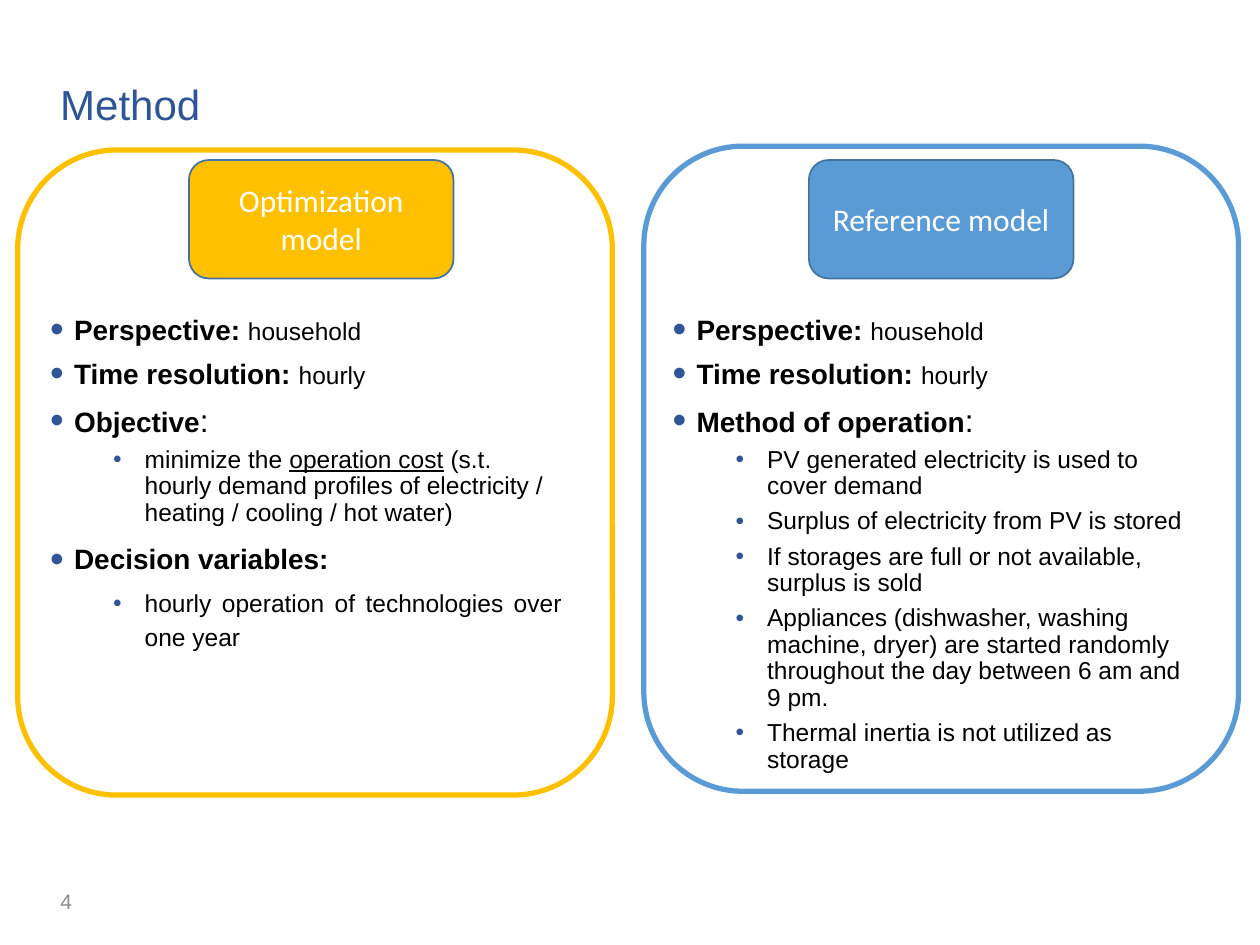
"""Build a slide that compares the optimization model with the reference model."""
from dataclasses import dataclass

import pptx
import pptx.dml.color
import pptx.enum.shapes
import pptx.enum.text
import pptx.oxml
import pptx.oxml.ns
import pptx.util

ALIGN = pptx.enum.text.PP_ALIGN
ANCHOR = pptx.enum.text.MSO_ANCHOR


@dataclass(frozen=True)
class Theme:
    navy: str = "2F5597"
    black: str = "000000"
    white: str = "FFFFFF"
    gray: str = "8C8C8C"
    outline: str = "43739E"
    amber: str = "FFC000"
    blue: str = "5B9BD5"
    body_font: str = "Arial"
    badge_font: str = "Calibri"
    title: int = 24
    badge: int = 18
    colon: int = 18
    heading: int = 16
    detail: int = 14
    number: int = 12


THEME = Theme()


def color(value):
    return pptx.dml.color.RGBColor.from_string(value)


def add_text(paragraph, text, size=THEME.detail, tint=THEME.black,
             font=THEME.body_font, bold=False, underline=False):
    run = paragraph.add_run()
    run.text = text
    run.font.size = pptx.util.Pt(size)
    run.font.name = font
    run.font.bold = bold
    run.font.underline = underline
    run.font.color.rgb = color(tint)


def add_bullet(paragraph, left, hanging, percent):
    properties = paragraph._p.get_or_add_pPr()
    properties.set("marL", str(pptx.util.Inches(left)))
    properties.set("indent", str(-pptx.util.Inches(hanging)))
    namespace = pptx.oxml.ns.nsdecls("a")
    for element in (
        f'<a:buClr {namespace}><a:srgbClr val="{THEME.navy}"/></a:buClr>',
        f'<a:buSzPct {namespace} val="{percent * 1000}"/>',
        f'<a:buFont {namespace} typeface="Arial"/>',
        f'<a:buChar {namespace} char="•"/>',
    ):
        properties.append(pptx.oxml.parse_xml(element))


class SlideBuilder:
    """Place styled elements on a grid of 100 columns by 75 rows."""

    columns, rows = 100, 75

    def __init__(self, presentation, theme):
        self.theme = theme
        self.cell_width = presentation.slide_width / self.columns
        self.cell_height = presentation.slide_height / self.rows
        self.slide = presentation.slides.add_slide(presentation.slide_layouts[6])

    def place(self, column, row, width, height):
        return (round(column * self.cell_width), round(row * self.cell_height),
                round(width * self.cell_width), round(height * self.cell_height))

    def text_box(self, area, anchor=ANCHOR.TOP):
        frame = self.slide.shapes.add_textbox(*self.place(*area)).text_frame
        frame.word_wrap = True
        frame.vertical_anchor = anchor
        return frame

    def label(self, area, text, anchor=ANCHOR.TOP, spacing=1.0, **style):
        paragraph = self.text_box(area, anchor).paragraphs[0]
        paragraph.line_spacing = spacing
        add_text(paragraph, text, **style)

    def rounded(self, area, line, width, fill=None):
        shape = self.slide.shapes.add_shape(
            pptx.enum.shapes.MSO_SHAPE.ROUNDED_RECTANGLE, *self.place(*area))
        shape.shadow.inherit = False
        shape.line.color.rgb = color(line)
        shape.line.width = pptx.util.Pt(width)
        if fill:
            shape.fill.solid()
            shape.fill.fore_color.rgb = color(fill)
        else:
            shape.fill.background()
        return shape

    def frame(self, area, tint):
        self.rounded(area, tint, 3)

    def badge(self, area, text, fill):
        frame = self.rounded(area, self.theme.outline, 1, fill).text_frame
        frame.word_wrap = True
        frame.vertical_anchor = ANCHOR.MIDDLE
        frame.paragraphs[0].alignment = ALIGN.CENTER
        add_text(frame.paragraphs[0], text, size=self.theme.badge,
                 tint=self.theme.white, font=self.theme.badge_font)

    def bullets(self, area, items):
        frame = self.text_box(area)
        for index, (level, spacing, alignment, runs) in enumerate(items):
            paragraph = frame.paragraphs[0] if index == 0 else frame.add_paragraph()
            paragraph.level = level
            paragraph.alignment = alignment
            paragraph.line_spacing = spacing
            if index:
                paragraph.space_before = pptx.util.Pt(5 if level else 6)
            add_bullet(paragraph, *((0.75, 0.25, 100) if level else (0.19, 0.19, 140)))
            for text, style in runs:
                add_text(paragraph, text, **style)


def heading(title, tail="", tail_size=THEME.detail, spacing=1.0, alignment=ALIGN.LEFT):
    runs = [(title, {"size": THEME.heading, "bold": True})]
    if tail:
        runs.append((tail, {"size": tail_size}))
    return 0, spacing, alignment, runs


def detail(*runs, spacing=0.9, alignment=ALIGN.LEFT):
    return 1, spacing, alignment, [
        run if isinstance(run, tuple) else (run, {}) for run in runs]


def main():
    presentation = pptx.Presentation()
    presentation.slide_width = pptx.util.Inches(10)
    presentation.slide_height = pptx.util.Inches(7.5)
    builder = SlideBuilder(presentation, THEME)

    shared = [heading("Perspective: ", "household"),
              heading("Time resolution: ", "hourly")]
    justified = {"spacing": 1.14, "alignment": ALIGN.JUSTIFY}
    optimization = shared + [
        heading("Objective", ":", THEME.colon),
        detail("minimize the ", ("operation cost", {"underline": True}),
               " (s.t. hourly demand profiles of electricity / heating / cooling / hot water)"),
        heading("Decision variables:", **justified),
        detail("hourly operation of technologies over one year", **justified),
    ]
    reference = shared + [heading("Method of operation", ":", THEME.colon)] + [
        detail(text) for text in (
            "PV generated electricity is used to cover demand",
            "Surplus of electricity from PV is stored",
            "If storages are full or not available, surplus is sold",
            "Appliances (dishwasher, washing machine, dryer) are started randomly "
            "throughout the day between 6 am and 9 pm.",
            "Thermal inertia is not utilized as storage",
        )]

    builder.label((3.8, 6.2, 92.4, 7.4), "Method", spacing=0.9,
                  size=THEME.title, tint=THEME.navy)
    builder.label((3.8, 69.5, 22.5, 4), "4", anchor=ANCHOR.MIDDLE,
                  size=THEME.number, tint=THEME.gray)
    models = (
        ("Optimization model", THEME.amber, (1.4, 11.9), 15, (3, 32.5), optimization),
        ("Reference model", THEME.blue, (51.1, 11.6), 64.2, (52.4, 35.8), reference),
    )
    for name, tint, corner, badge_column, (text_column, text_height), items in models:
        builder.bullets((text_column, 24.3, 42.6, text_height), items)
        builder.badge((badge_column, 12.7, 21, 9.4), name, tint)
        builder.frame((*corner, 47.2, 51.2), tint)

    presentation.save("out.pptx")


if __name__ == "__main__":
    main()
